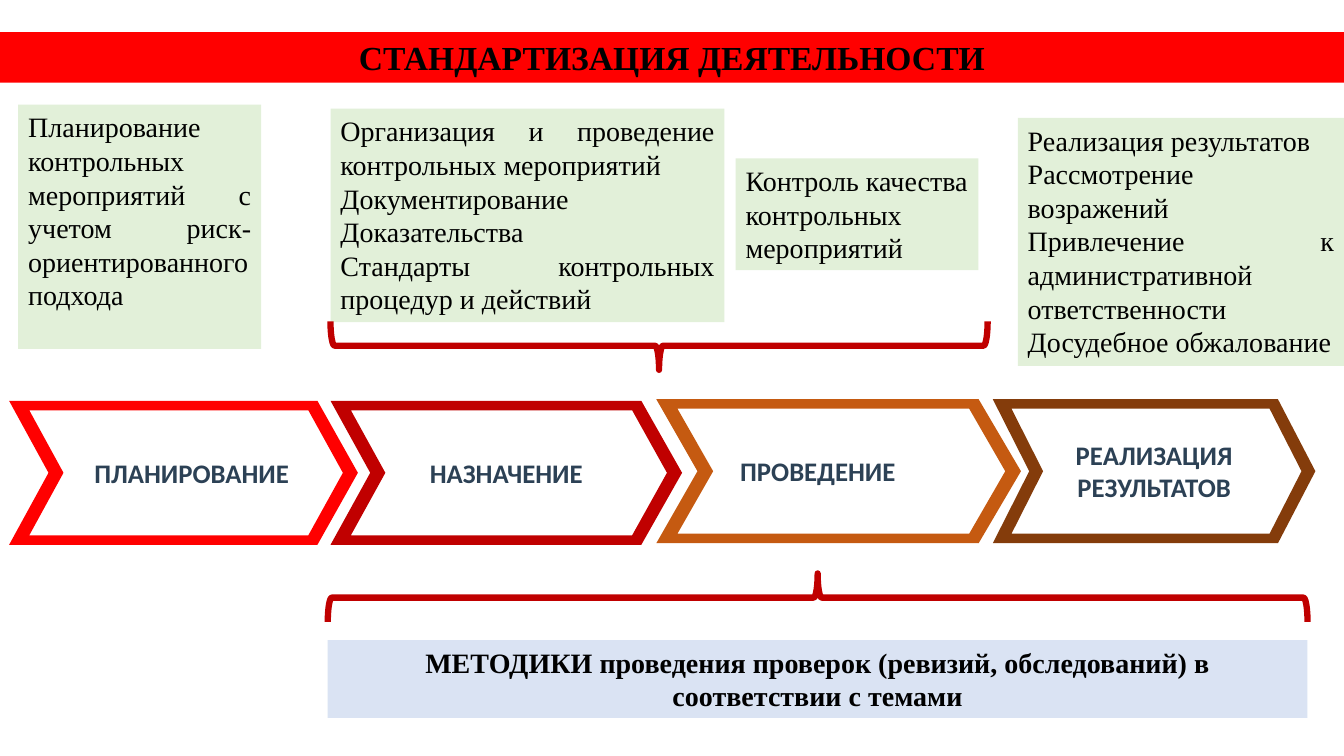
import pptx
import pptx.util
import pptx.dml.color
import pptx.enum.shapes
import pptx.enum.text

Cm = pptx.util.Cm
RGBColor = pptx.dml.color.RGBColor
Shape = pptx.enum.shapes.MSO_SHAPE
Align = pptx.enum.text.PP_ALIGN
Anchor = pptx.enum.text.MSO_ANCHOR

RED = RGBColor(0xFF, 0x00, 0x00)
CRIMSON = RGBColor(0xC0, 0x00, 0x00)
ORANGE = RGBColor(0xC5, 0x5A, 0x11)
BROWN = RGBColor(0x84, 0x3C, 0x0B)
GREEN = RGBColor(0xE2, 0xF0, 0xD9)
BLUE = RGBColor(0xDA, 0xE3, 0xF3)
NAVY = RGBColor(0x2C, 0x41, 0x55)
BLACK = RGBColor(0x00, 0x00, 0x00)

OUTER = [(0, 0), (0.884, 0), (1, 0.5), (0.884, 1), (0, 1), (0.113, 0.5)]
INNER = [(0.058, 0.066), (0.156, 0.5), (0.058, 0.934),
         (0.858, 0.934), (0.957, 0.5), (0.858, 0.066)]


def write(shape, text, font="Times New Roman", size=20, bold=False, color=BLACK,
          align=Align.JUSTIFY, anchor=Anchor.TOP, inset=0.25, outset=0.25):
    frame = shape.text_frame
    frame.word_wrap = True
    frame.auto_size = pptx.enum.text.MSO_AUTO_SIZE.NONE
    frame.vertical_anchor = anchor
    frame.margin_left, frame.margin_right = Cm(inset), Cm(outset)
    frame.margin_top = frame.margin_bottom = Cm(0.13)
    frame.text = text
    for para in frame.paragraphs:
        para.alignment = align
        para.font.name = font
        para.font.size = pptx.util.Pt(size)
        para.font.bold = bold
        para.font.color.rgb = color


class Board:
    def __init__(self, deck):
        self.slide = deck.slides.add_slide(deck.slide_layouts[5])
        self.shapes = self.slide.shapes

    def paint(self, shape, fill):
        shape.shadow.inherit = False
        shape.fill.solid()
        shape.fill.fore_color.rgb = fill
        shape.line.fill.background()

    def title(self, text, left, top, width, height):
        head = self.shapes.title
        head.left, head.top = Cm(left), Cm(top)
        head.width, head.height = Cm(width), Cm(height)
        head.fill.solid()
        head.fill.fore_color.rgb = RED
        write(head, text, size=24, bold=True, align=Align.CENTER)

    def box(self, text, left, top, width, height, fill=GREEN, **style):
        area = map(Cm, (left, top, width, height))
        shape = self.shapes.add_shape(Shape.RECTANGLE, *area)
        self.paint(shape, fill)
        write(shape, text, **style)

    def stage(self, text, left, top, width, fill, height=3.63, **style):
        def place(points):
            return [(Cm(left + x * width), Cm(top + y * height)) for x, y in points]

        outer, inner = place(OUTER), place(INNER)
        form = self.shapes.build_freeform(*outer[0], scale=1.0)
        form.add_line_segments(outer[1:], close=True)
        form.move_to(*inner[0])
        form.add_line_segments(inner[1:], close=True)
        shape = form.convert_to_shape()
        self.paint(shape, fill)
        write(shape, text, font="Calibri", size=19.1, bold=True, color=NAVY,
              align=Align.CENTER, anchor=Anchor.MIDDLE, **style)

    def brace(self, left, top, width, turn, thick=1.22):
        x = left + (width - thick) / 2
        y = top - (width - thick) / 2
        shape = self.shapes.add_shape(Shape.LEFT_BRACE, Cm(x), Cm(y), Cm(thick), Cm(width))
        shape.shadow.inherit = False
        shape.rotation = turn
        shape.fill.background()
        shape.line.color.rgb = CRIMSON
        shape.line.width = pptx.util.Pt(4.5)


def main():
    deck = pptx.Presentation()
    deck.slide_width, deck.slide_height = Cm(33.87), Cm(19.05)
    board = Board(deck)
    board.title("СТАНДАРТИЗАЦИЯ ДЕЯТЕЛЬНОСТИ", 0, 0.81, 33.87, 1.27)

    board.box("Планирование контрольных мероприятий с учетом "
              "риск-ориентированного подхода", 0.46, 2.64, 6.12, 6.15)
    board.box("Организация и проведение контрольных мероприятий\n"
              "Документирование\nДоказательства\n"
              "Стандарты контрольных процедур и действий", 8.33, 2.74, 9.93, 5.38)
    board.box("Контроль качества контрольных мероприятий",
              18.54, 3.99, 6.12, 2.82, align=Align.LEFT)
    board.box("Реализация результатов\nРассмотрение возражений\n"
              "Привлечение к административной ответственности\n"
              "Досудебное обжалование", 25.65, 2.97, 8.22, 6.25)
    board.box("МЕТОДИКИ проведения проверок (ревизий, обследований) "
              "в соответствии с темами", 8.26, 16.13, 24.69, 1.96,
              fill=BLUE, bold=True, align=Align.CENTER)

    board.stage("ПЛАНИРОВАНИЕ", 0.23, 10.1, 8.79, RED, inset=0.66)
    board.stage("НАЗНАЧЕНИЕ", 8.33, 10.1, 8.86, CRIMSON)
    board.stage("ПРОВЕДЕНИЕ", 16.54, 10.06, 9.19, ORANGE, outset=1.3)
    board.stage("РЕАЛИЗАЦИЯ РЕЗУЛЬТАТОВ", 25.02, 10.06, 8.13, BROWN,
                inset=0.6, outset=0.6)

    board.brace(8.33, 8.1, 16.56, 270)
    board.brace(8.26, 14.45, 24.69, 90)
    deck.save("out.pptx")


if __name__ == "__main__":
    main()
